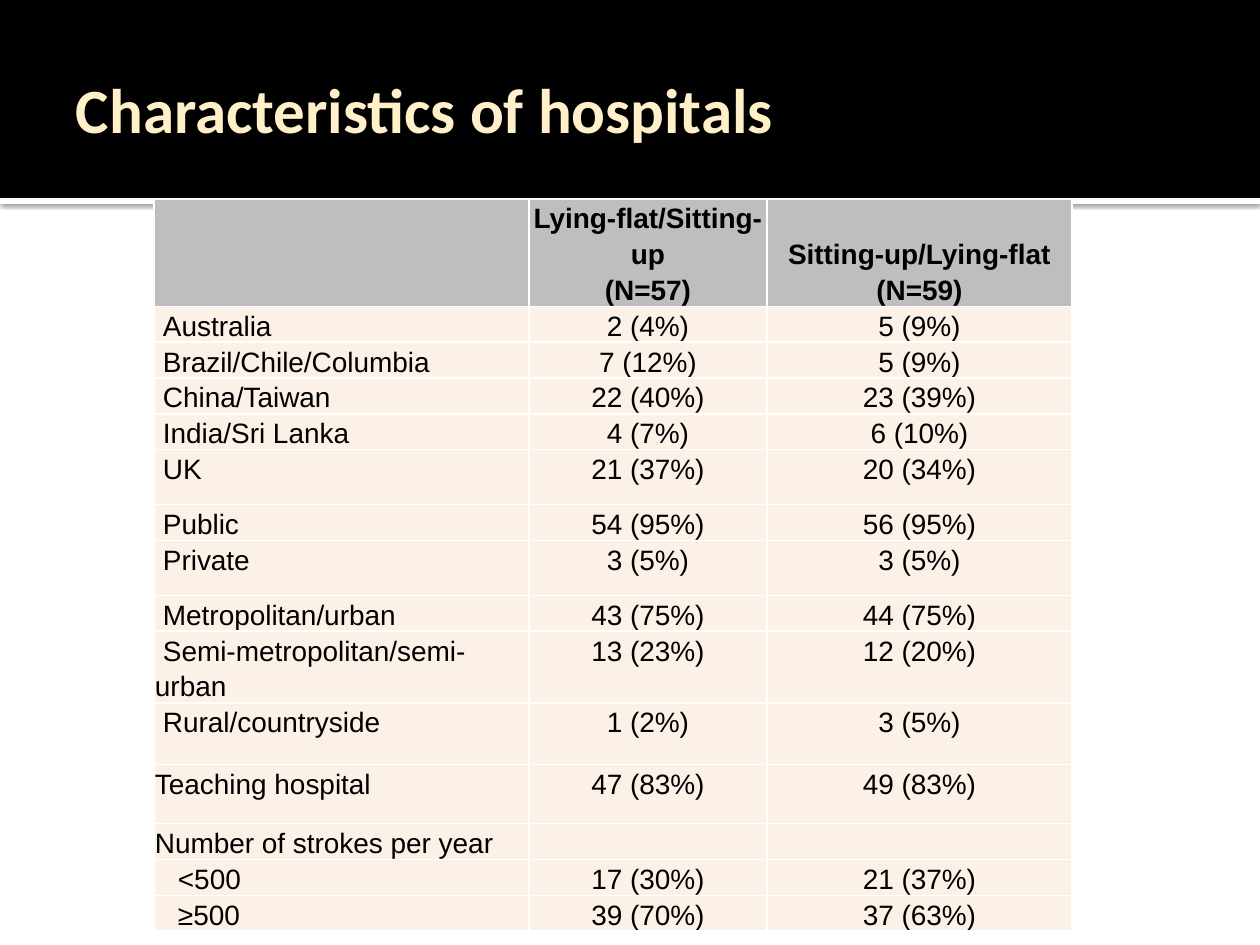
import pptx
import pptx.dml.color
import pptx.enum.shapes
import pptx.enum.text
import pptx.oxml.ns
import pptx.util
from lxml import etree

RGBColor = pptx.dml.color.RGBColor
Align = pptx.enum.text.PP_ALIGN
Anchor = pptx.enum.text.MSO_ANCHOR
qn = pptx.oxml.ns.qn

BLACK = RGBColor(0x00, 0x00, 0x00)
WHITE = RGBColor(0xFF, 0xFF, 0xFF)
CREAM = RGBColor(0xFF, 0xF0, 0xC9)
HEADER_GREY = RGBColor(0xBE, 0xBE, 0xC1)
ROW_PEACH = RGBColor(0xFC, 0xF1, 0xE7)

EMU_PER_PX = 914400 / 126
COLUMNS = [375, 238, 305]
HEADER = ["", "Lying-flat/Sitting-up\n(N=57)", "Sitting-up/Lying-flat\n(N=59)"]
HEADER_HEIGHT = 50
# Row height in px, first-line indent in px, cell texts
ROWS = [
    (25, 8, "Australia", "2 (4%)", "5 (9%)"),
    (25, 8, "Brazil/Chile/Columbia", "7 (12%)", "5 (9%)"),
    (25, 8, "China/Taiwan", "22 (40%)", "23 (39%)"),
    (25, 8, "India/Sri Lanka", "4 (7%)", "6 (10%)"),
    (55, 8, "UK", "21 (37%)", "20 (34%)"),
    (25, 8, "Public", "54 (95%)", "56 (95%)"),
    (55, 8, "Private", "3 (5%)", "3 (5%)"),
    (25, 8, "Metropolitan/urban", "43 (75%)", "44 (75%)"),
    (25, 8, "Semi-metropolitan/semi-urban", "13 (23%)", "12 (20%)"),
    (62, 8, "Rural/countryside", "1 (2%)", "3 (5%)"),
    (59, 0, "Teaching hospital", "47 (83%)", "49 (83%)"),
    (25, 0, "Number of strokes per year", "", ""),
    (25, 23, "<500", "17 (30%)", "21 (37%)"),
    (25, 23, "≥500", "39 (70%)", "37 (63%)"),
]


def px(n):
    return pptx.util.Emu(round(n * EMU_PER_PX))


class SlideBuilder:
    title_font = "Calibri"
    body_font = "Arial"
    title_size = 36
    body_size = 16

    def __init__(self, prs):
        self.slide = prs.slides.add_slide(prs.slide_layouts[5])

    def band(self, x, y, w, h, color):
        kind = pptx.enum.shapes.MSO_SHAPE.RECTANGLE
        sp = self.slide.shapes.add_shape(kind, px(x), px(y), px(w), px(h))
        sp.shadow.inherit = False
        sp.fill.solid()
        sp.fill.fore_color.rgb = color
        sp.line.fill.background()
        return sp

    def drop_shadow(self, sp):
        effects = sp._element.spPr.find(qn("a:effectLst"))
        shadow = etree.SubElement(effects, qn("a:outerShdw"), blurRad="31750",
                                  dist="10160", dir="5400000", rotWithShape="0")
        color = etree.SubElement(shadow, qn("a:srgbClr"), val=str(BLACK))
        etree.SubElement(color, qn("a:alpha"), val="60000")

    def title(self, text, x, y, w, h):
        sp = self.slide.shapes.title
        sp.left, sp.top, sp.width, sp.height = px(x), px(y), px(w), px(h)
        self.slide.shapes._spTree.append(sp._element)  # in front of the bands
        tf = sp.text_frame
        tf.text = text
        tf.word_wrap = True
        tf.auto_size = pptx.enum.text.MSO_AUTO_SIZE.NONE
        tf.vertical_anchor = Anchor.MIDDLE
        tf.margin_left = px(13)
        tf.margin_top = tf.margin_right = tf.margin_bottom = px(6)
        p = tf.paragraphs[0]
        p.alignment = Align.LEFT
        self.format_run(p.runs[0], self.title_font, self.title_size, CREAM, True)

    def format_run(self, r, name, size, color, bold):
        r.font.name = name
        r.font.size = pptx.util.Pt(size)
        r.font.color.rgb = color
        r.font.bold = bold

    def table(self, x, y, columns, header, rows):
        heights = [HEADER_HEIGHT] + [row[0] for row in rows]
        frame = self.slide.shapes.add_table(
            len(heights), len(columns), px(x), px(y), px(sum(columns)), px(sum(heights)))
        table = frame.table
        for column, width in zip(table.columns, columns):
            column.width = px(width)
        for row, height in zip(table.rows, heights):
            row.height = px(height)
        for j, text in enumerate(header):
            self.cell(table.cell(0, j), text, HEADER_GREY, bold=True, anchor=Anchor.BOTTOM)
        for i, (_, indent, label, *values) in enumerate(rows, 1):
            self.cell(table.cell(i, 0), label, ROW_PEACH, align=Align.LEFT, indent=indent)
            for j, value in enumerate(values, 1):
                self.cell(table.cell(i, j), value, ROW_PEACH)

    def cell(self, cell, text, fill, bold=False, align=Align.CENTER,
             anchor=Anchor.TOP, indent=0):
        cell.margin_left = cell.margin_right = px(1)
        cell.margin_top = cell.margin_bottom = 0
        cell.vertical_anchor = anchor
        self.cell_borders(cell)
        cell.fill.solid()
        cell.fill.fore_color.rgb = fill
        cell.text_frame.text = text
        for p in cell.text_frame.paragraphs:
            p.alignment = align
            p.line_spacing = 1.15
            if indent:
                p._p.get_or_add_pPr().set("indent", str(px(indent)))
            for r in p.runs:
                self.format_run(r, self.body_font, self.body_size, BLACK, bold)
            if not p.runs:  # keeps an empty cell from stretching its row
                etree.SubElement(p._p, qn("a:endParaRPr"), sz=str(self.body_size * 100))

    def cell_borders(self, cell):
        tcPr = cell._tc.get_or_add_tcPr()
        for side in ("lnL", "lnR", "lnT", "lnB"):
            ln = etree.SubElement(tcPr, qn("a:" + side), w=str(pptx.util.Pt(1)))
            fill = etree.SubElement(ln, qn("a:solidFill"))
            etree.SubElement(fill, qn("a:srgbClr"), val=str(WHITE))


def main():
    prs = pptx.Presentation()
    prs.slide_width, prs.slide_height = px(1260), px(945)
    s = SlideBuilder(prs)
    s.drop_shadow(s.band(0, 198, 1260, 6, WHITE))
    s.band(0, 0, 1260, 198, BLACK)
    s.title("Characteristics of hospitals", 63, 22, 1134, 173)
    s.table(154, 199, COLUMNS, HEADER, ROWS)
    prs.save("out.pptx")


if __name__ == "__main__":
    main()
